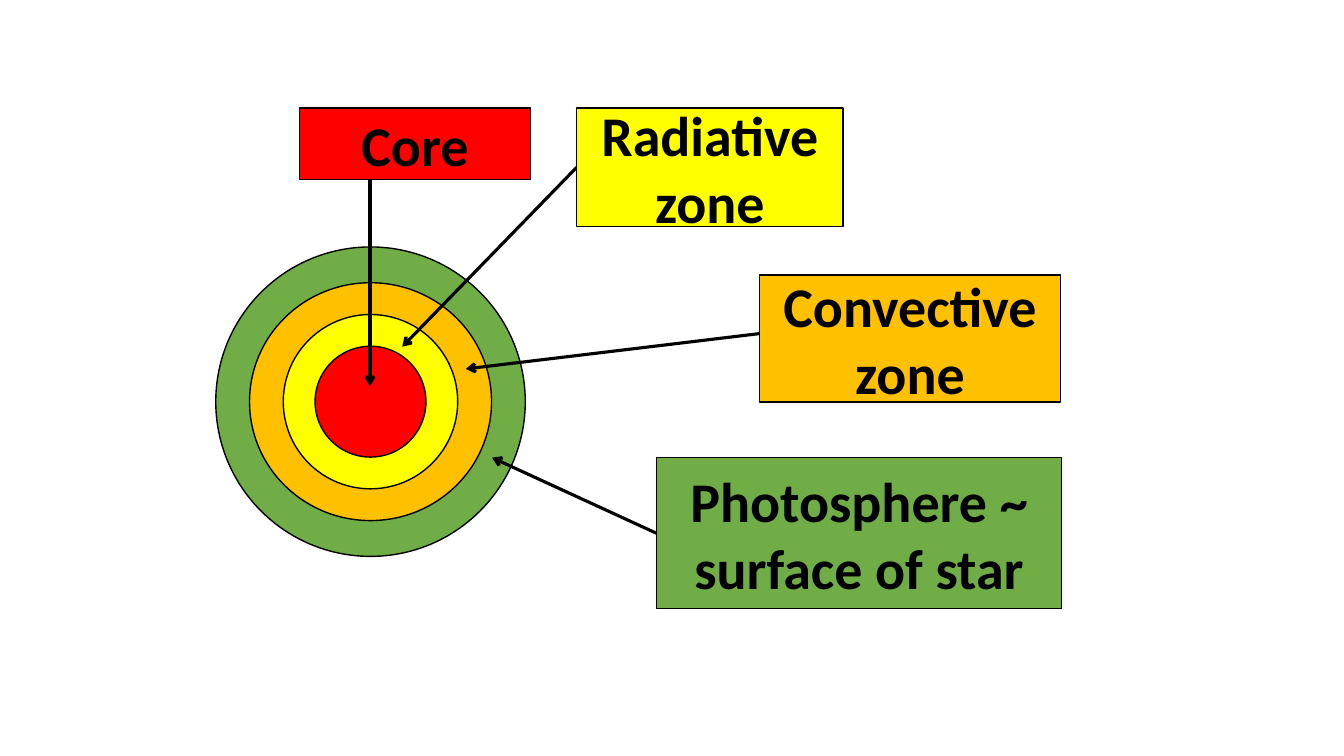
from dataclasses import dataclass

from lxml import etree
from pptx import Presentation
from pptx.dml.color import RGBColor
from pptx.enum import shapes, text
from pptx.oxml.ns import qn
from pptx.util import Inches, Pt


@dataclass(frozen=True)
class Theme:
    core: str = "FF0000"
    radiative: str = "FFFF00"
    convective: str = "FFC000"
    photosphere: str = "70AD47"
    ink: str = "000000"
    font: str = "Calibri"
    label_size: float = 40
    outline: float = 1
    arrow: float = 2.25


THEME = Theme()
STAR_BOX = (2.14, 2.45, 3.07, 3.07)
LABEL_BOX = (2.97, 1.07, 7.56, 4.97)

LAYERS = [
    (THEME.photosphere, 3.07, 3.07),
    (THEME.convective, 2.4, 2.36),
    (THEME.radiative, 1.73, 1.73),
    (THEME.core, 1.1, 1.1),
]

LABELS = [
    ("Core", THEME.core, (0, 0, 2.29, 0.71), (0.7, 0.71), (0.7, 2.76)),
    ("Radiative zone", THEME.radiative, (2.75, 0, 2.64, 1.18), (2.75, 0.59), (1.02, 2.37)),
    ("Convective zone", THEME.convective, (4.56, 1.66, 2.99, 1.26), (4.56, 2.24), (1.65, 2.59)),
    ("Photosphere ~ surface of star", THEME.photosphere, (3.54, 3.47, 4.02, 1.5), (3.54, 4.22), (1.91, 3.47)),
]


def add_outlined_shape(slide, kind, box, fill):
    shape = slide.shapes.add_shape(kind, *map(Inches, box))
    shape.shadow.inherit = False
    shape.fill.solid()
    shape.fill.fore_color.rgb = RGBColor.from_string(fill)
    shape.line.color.rgb = RGBColor.from_string(THEME.ink)
    shape.line.width = Pt(THEME.outline)
    return shape


def add_arrow(slide, start, end):
    connector = slide.shapes.add_connector(
        shapes.MSO_CONNECTOR.STRAIGHT, *map(Inches, (*start, *end))
    )
    connector.line.color.rgb = RGBColor.from_string(THEME.ink)
    connector.line.width = Pt(THEME.arrow)
    etree.SubElement(connector.line._get_or_add_ln(), qn("a:tailEnd"), type="arrow")
    etree.SubElement(connector._element.spPr, qn("a:effectLst"))


def add_label(slide, box, caption, fill):
    shape = add_outlined_shape(slide, shapes.MSO_SHAPE.RECTANGLE, box, fill)
    frame = shape.text_frame
    frame.word_wrap = True
    frame.vertical_anchor = text.MSO_ANCHOR.MIDDLE
    frame.text = caption
    paragraph = frame.paragraphs[0]
    paragraph.alignment = text.PP_ALIGN.CENTER
    paragraph.font.name = THEME.font
    paragraph.font.size = Pt(THEME.label_size)
    paragraph.font.bold = True
    paragraph.font.color.rgb = RGBColor.from_string(THEME.ink)


def add_star(slide, box):
    left, top, width, height = box
    for fill, layer_width, layer_height in LAYERS:
        layer_box = (
            left + (width - layer_width) / 2,
            top + (height - layer_height) / 2,
            layer_width,
            layer_height,
        )
        add_outlined_shape(slide, shapes.MSO_SHAPE.OVAL, layer_box, fill)


def add_labels(slide, box):
    left, top = box[:2]
    for caption, fill, (x, y, width, height), start, end in LABELS:
        start, end = ((left + dx, top + dy) for dx, dy in (start, end))
        add_arrow(slide, start, end)
        add_label(slide, (left + x, top + y, width, height), caption, fill)


def main():
    presentation = Presentation()
    presentation.slide_width = Inches(13.33)
    presentation.slide_height = Inches(7.5)
    slide = presentation.slides.add_slide(presentation.slide_layouts[6])
    add_star(slide, STAR_BOX)
    add_labels(slide, LABEL_BOX)
    presentation.save("out.pptx")


if __name__ == "__main__":
    main()
